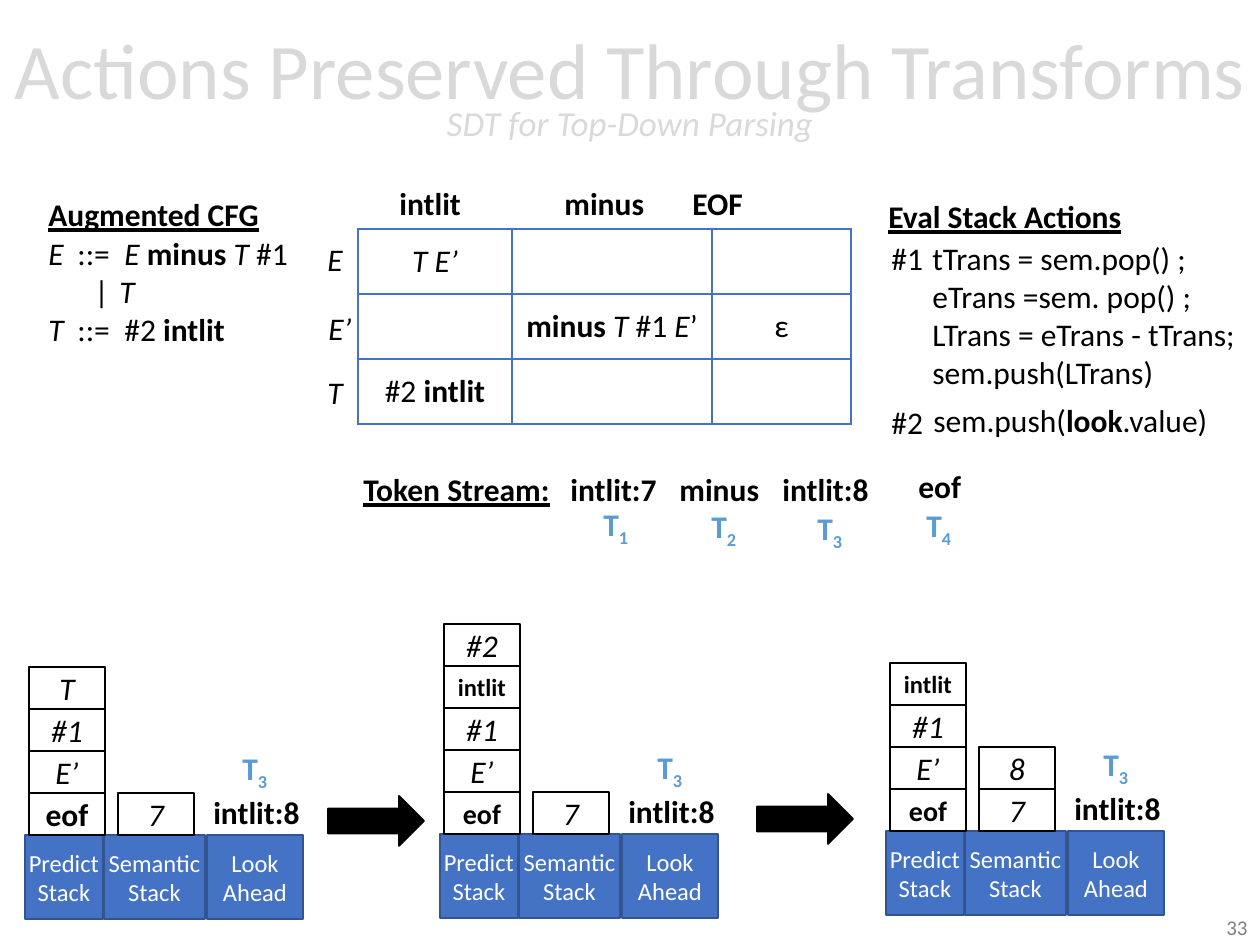
"""Builds the slide on semantic actions in top-down parsing."""
from pptx import Presentation
from pptx.dml.color import RGBColor
from pptx.enum.shapes import MSO_SHAPE
from pptx.enum.text import MSO_ANCHOR, MSO_AUTO_SIZE, PP_ALIGN
from pptx.oxml import parse_xml
from pptx.oxml.ns import nsdecls
from pptx.util import Emu, Pt

FONT = "Calibri"
BLACK, WHITE, BLUE, EDGE, SKY = "000000", "FFFFFF", "4472C4", "325491", "5B9BD5"
GRAY, PALE = "808080", "D9D9D9"
LEFT, MID, RIGHT = PP_ALIGN.LEFT, PP_ALIGN.CENTER, PP_ALIGN.RIGHT

TITLE = [("Actions Preserved Through Transforms", 45, False),
         ("SDT for Top-Down Parsing", 20, True)]

HEADS = [("Augmented CFG", 36, 189, 237), ("Eval Stack Actions", 876, 191, 261),
         ("Token Stream:", 351, 464, 213)]
RULES = [[("E", "i"), "\t::=\t", ("E ", "i"), ("minus", "b"), (" T ", "i"), "#1"],
         ["\t|\t", ("T", "i")],
         [("T", "i"), "\t::=\t#2 ", ("intlit", "b")]]
TABS = [(29, 76), (46, 71), (29, 76)]

COLS = [("intlit", 387, 87), ("minus", 552, 106), ("EOF", 680, 77)]
ROWS = [("E", 315, 234, 40), ("E’", 316, 303, 49), ("T", 315, 367, 40)]
WIDTHS = [154, 200, 139]
CELLS = {(0, 0): [("T E’", "i")],
         (1, 1): [("minus ", "b"), ("T", "i"), " #1 ", ("E", "i"), "’"],
         (1, 2): ["ε"],
         (2, 0): ["#2 ", ("intlit", "b")]}

ACTS = [([["#1"]], 879, 233, 58),
        ([["tTrans = sem.pop() ;"], ["eTrans =sem. pop() ;"],
          ["LTrans = eTrans - tTrans;"], ["sem.push(LTrans)"]], 920, 233, 331),
        ([["#2"]], 879, 397, 58),
        ([["sem.push(", ("look", "b"), ".value)"]], 921, 395, 310)]

TOKENS = [("intlit:7", 558, 464, 112, 591, 499), ("minus", 667, 464, 106, 699, 501),
          ("intlit:8", 770, 464, 112, 805, 503), ("eof", 906, 461, 68, 914, 500)]

BASES = [("Predict", "Stack", 0, 78), ("Semantic", "Stack", 79, 101),
         ("Look", "Ahead", 182, 96)]
EOF, INT = ("eof", "b", 16), ("intlit", "b", 14)
PRIME, ONE, TWO, TEE = [(t, "i", 18) for t in ("E’", "#1", "#2", "T")]
SEVEN, EIGHT = ("7", "i", 18), ("8", "i", 18)
STATES = [(25, 835, [("eof", "b", 18), PRIME, ONE, TEE], [SEVEN]),
          (440, 834, [EOF, PRIME, ONE, INT, TWO], [SEVEN]),
          (886, 831, [EOF, PRIME, ONE, INT], [SEVEN, EIGHT])]
ARROWS = [(328, 796), (757, 794)]


def px(n):
    return Emu(round(n * 914400 / 126))


def rgb(code):
    return RGBColor.from_string(code)


def write(frame, lines, size=18, color=BLACK, align=LEFT):
    for n, line in enumerate(lines):
        para = frame.add_paragraph() if n else frame.paragraphs[0]
        para.alignment = align
        font = para.font
        font.name, font.size, font.color.rgb = FONT, Pt(size), rgb(color)
        for part in line:
            text, flags = (part, "") if isinstance(part, str) else part
            run = para.add_run()
            run.text = text
            for flag, name in zip("biu", ("bold", "italic", "underline")):
                if flag in flags:
                    setattr(run.font, name, True)
            if "s" in flags:
                run.font._element.set("baseline", "-25000")


def label(slide, lines, x, y, w, **style):
    h = 50 + 38 * (len(lines) - 1)
    frame = slide.shapes.add_textbox(px(x), px(y), px(w), px(h)).text_frame
    frame.word_wrap = False
    write(frame, lines, **style)


def token(slide, n, x, y):
    label(slide, [[("T", "b"), (str(n), "bs")]], x, y, 52, color=SKY)


def block(slide, x, y, w, h, fill, edge, kind=MSO_SHAPE.RECTANGLE):
    shape = slide.shapes.add_shape(kind, px(x), px(y), px(w), px(h))
    shape.shadow.inherit = False
    shape.fill.solid()
    shape.fill.fore_color.rgb = rgb(fill)
    shape.line.color.rgb, shape.line.width = rgb(edge), Pt(1)
    frame = shape.text_frame
    frame.margin_left = frame.margin_right = 0
    frame.vertical_anchor = MSO_ANCHOR.MIDDLE
    return frame


def head(slide):
    shape = slide.shapes.title
    shape.left, shape.top, shape.width, shape.height = px(0), px(3), px(1260), px(183)
    frame = shape.text_frame
    frame.auto_size = MSO_AUTO_SIZE.NONE
    frame.vertical_anchor = MSO_ANCHOR.MIDDLE
    para = frame.paragraphs[0]
    para.alignment, para.line_spacing = MID, 0.7
    para.font.name, para.font.color.rgb = FONT, rgb(PALE)
    for n, (text, size, slant) in enumerate(TITLE):
        if n:
            para.add_line_break()
        run = para.add_run()
        run.text = text
        run.font.size, run.font.italic = Pt(size), slant


def grammar(slide):
    label(slide, RULES, 36, 228, 267)
    for para, stops in zip(slide.shapes[-1].text_frame.paragraphs, TABS):
        tabs = "".join(f'<a:tab pos="{px(s)}" algn="l"/>' for s in stops)
        item = parse_xml(f'<a:tabLst {nsdecls("a")}>{tabs}</a:tabLst>')
        para.font._element.addprevious(item)


def grid(slide):
    table = slide.shapes.add_table(3, 3, px(358), px(229), px(sum(WIDTHS)), px(195)).table
    table.first_row = table.horz_banding = False
    for col, w in zip(table.columns, WIDTHS):
        col.width = px(w)
    for r, row in enumerate(table.rows):
        row.height = px(65)
        for c, cell in enumerate(row.cells):
            cell.margin_left = cell.margin_right = 0
            cell.vertical_anchor = MSO_ANCHOR.MIDDLE
            for side in "LRTB":
                cell._tc.get_or_add_tcPr().append(parse_xml(
                    f'<a:ln{side} {nsdecls("a")} w="12700"><a:solidFill>'
                    f'<a:srgbClr val="{BLUE}"/></a:solidFill></a:ln{side}>'))
            cell.fill.solid()
            cell.fill.fore_color.rgb = rgb(WHITE)
            write(cell.text_frame, [CELLS.get((r, c), [])], align=MID)
    for text, x, w in COLS:
        label(slide, [[(text, "b")]], x, 178, w)
    for text, x, y, w in ROWS:
        label(slide, [[(text, "i")]], x, y, w)


def state(slide, left, base, stack, values):
    for top, low, x, w in BASES:
        frame = block(slide, left + x, base, w, 84, BLUE, EDGE)
        write(frame, [[top], [low]], 14, WHITE, MID)
    for x, pile in ((4, stack), (93, values)):
        for n, (text, flag, size) in enumerate(pile, 1):
            frame = block(slide, left + x, base - 42 * n, 76, 42, WHITE, BLACK)
            write(frame, [[(text, flag)]], size, align=MID)
    label(slide, [[("intlit:8", "b")]], left + 174, base - 48, 115, align=MID)
    token(slide, 3, left + 205, base - 92)


def main():
    deck = Presentation()
    deck.slide_width, deck.slide_height = px(1260), px(945)
    slide = deck.slides.add_slide(deck.slide_layouts[5])
    head(slide)
    for text, x, y, w in HEADS:
        label(slide, [[(text, "bu")]], x, y, w)
    grammar(slide)
    grid(slide)
    for lines, x, y, w in ACTS:
        label(slide, lines, x, y, w)
    for n, (text, x, y, w, left, top) in enumerate(TOKENS, 1):
        label(slide, [[(text, "b")]], x, y, w)
        token(slide, n, left, top)
    for item in STATES:
        state(slide, *item)
    for x, y in ARROWS:
        block(slide, x, y, 96, 50, BLACK, BLACK, MSO_SHAPE.RIGHT_ARROW)
    label(slide, [["33"]], 976, 908, 284, size=12, color=GRAY, align=RIGHT)
    deck.save("out.pptx")


if __name__ == "__main__":
    main()
